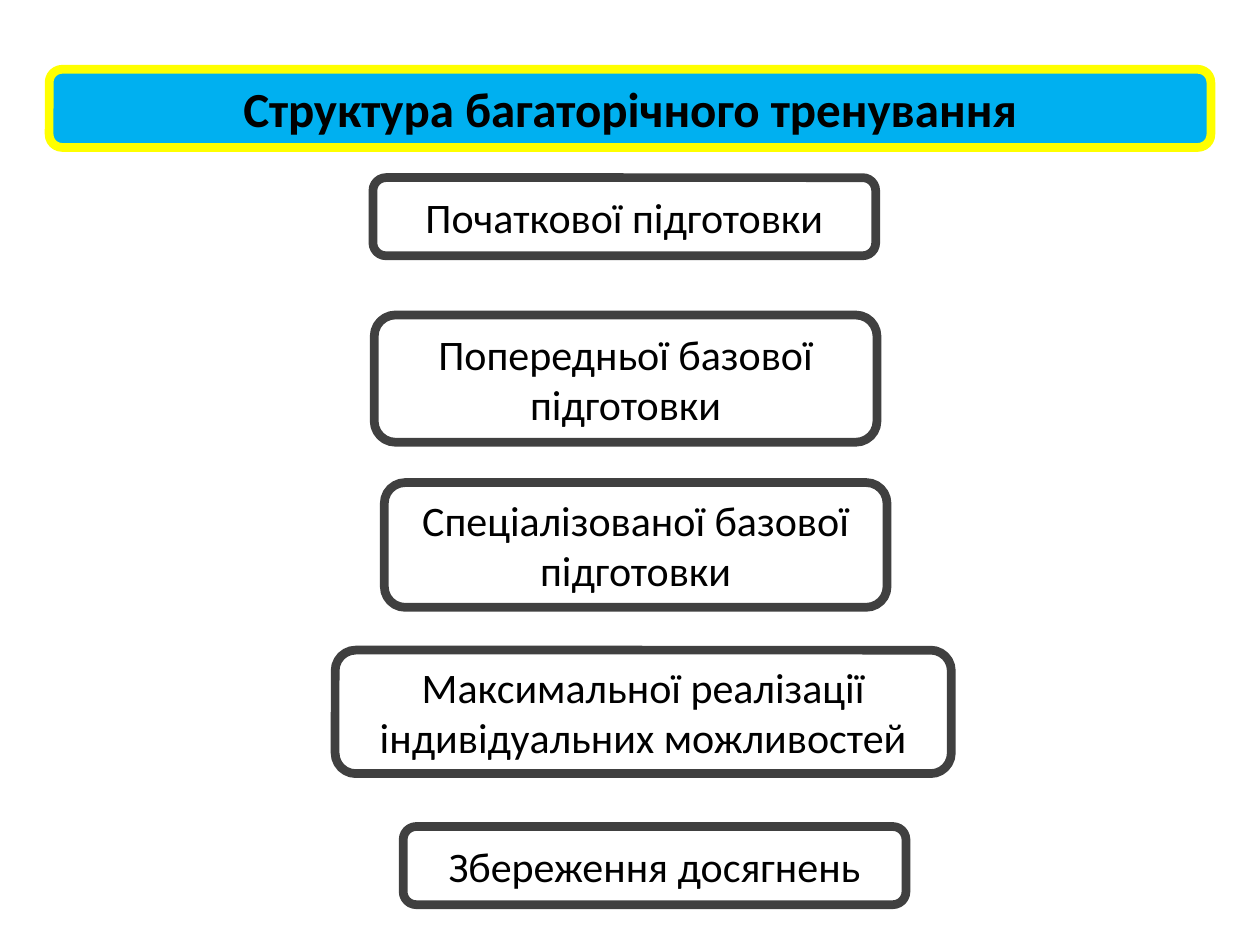
from dataclasses import dataclass

from pptx import Presentation
from pptx.dml.color import RGBColor
from pptx.enum.shapes import MSO_SHAPE
from pptx.enum.text import MSO_ANCHOR, PP_ALIGN
from pptx.util import Inches, Pt


@dataclass(frozen=True)
class Theme:
    font: str = "Calibri"
    title_size: int = 28
    stage_size: int = 24
    line_width: int = 5
    text: str = "000000"
    title_fill: str = "00B0F0"
    title_line: str = "FFFF00"
    stage_fill: str = "FFFFFF"
    stage_line: str = "404040"


@dataclass(frozen=True)
class Box:
    text: str
    left: float
    top: float
    width: float = 3.99
    height: float = 0.62


THEME = Theme()

TITLE = Box("Структура багаторічного тренування", 0.39, 0.55, width=9.22)
STAGES = [
    Box("Початкової підготовки", 2.96, 1.41),
    Box("Попередньої базової підготовки", 2.97, 2.5, height=1.01),
    Box("Спеціалізованої базової підготовки", 3.05, 3.83, height=0.99),
    Box("Максимальної реалізації індивідуальних можливостей",
        2.66, 5.16, width=4.89, height=0.98),
    Box("Збереження досягнень", 3.2, 6.56),
]


def write_text(shape, text: str, *, size: int, bold: bool = False) -> None:
    tf = shape.text_frame
    tf.word_wrap = True
    tf.vertical_anchor = MSO_ANCHOR.MIDDLE
    p = tf.paragraphs[0]
    p.alignment = PP_ALIGN.CENTER
    r = p.add_run()
    r.text = text
    r.font.name = THEME.font
    r.font.size = Pt(size)
    r.font.bold = bold
    r.font.color.rgb = RGBColor.from_string(THEME.text)


def draw_box(s, box: Box, *, fill: str, line: str, size: int, bold: bool = False) -> None:
    sp = s.shapes.add_shape(
        MSO_SHAPE.ROUNDED_RECTANGLE,
        Inches(box.left), Inches(box.top), Inches(box.width), Inches(box.height),
    )
    sp.shadow.inherit = False
    sp.fill.solid()
    sp.fill.fore_color.rgb = RGBColor.from_string(fill)
    sp.line.color.rgb = RGBColor.from_string(line)
    sp.line.width = Pt(THEME.line_width)
    write_text(sp, box.text, size=size, bold=bold)


def main() -> None:
    prs = Presentation()
    prs.slide_width, prs.slide_height = Inches(10), Inches(7.5)
    s = prs.slides.add_slide(prs.slide_layouts[6])
    draw_box(s, TITLE, fill=THEME.title_fill, line=THEME.title_line,
             size=THEME.title_size, bold=True)
    for stage in STAGES:
        draw_box(s, stage, fill=THEME.stage_fill, line=THEME.stage_line,
                 size=THEME.stage_size)
    prs.save("out.pptx")


if __name__ == "__main__":
    main()
